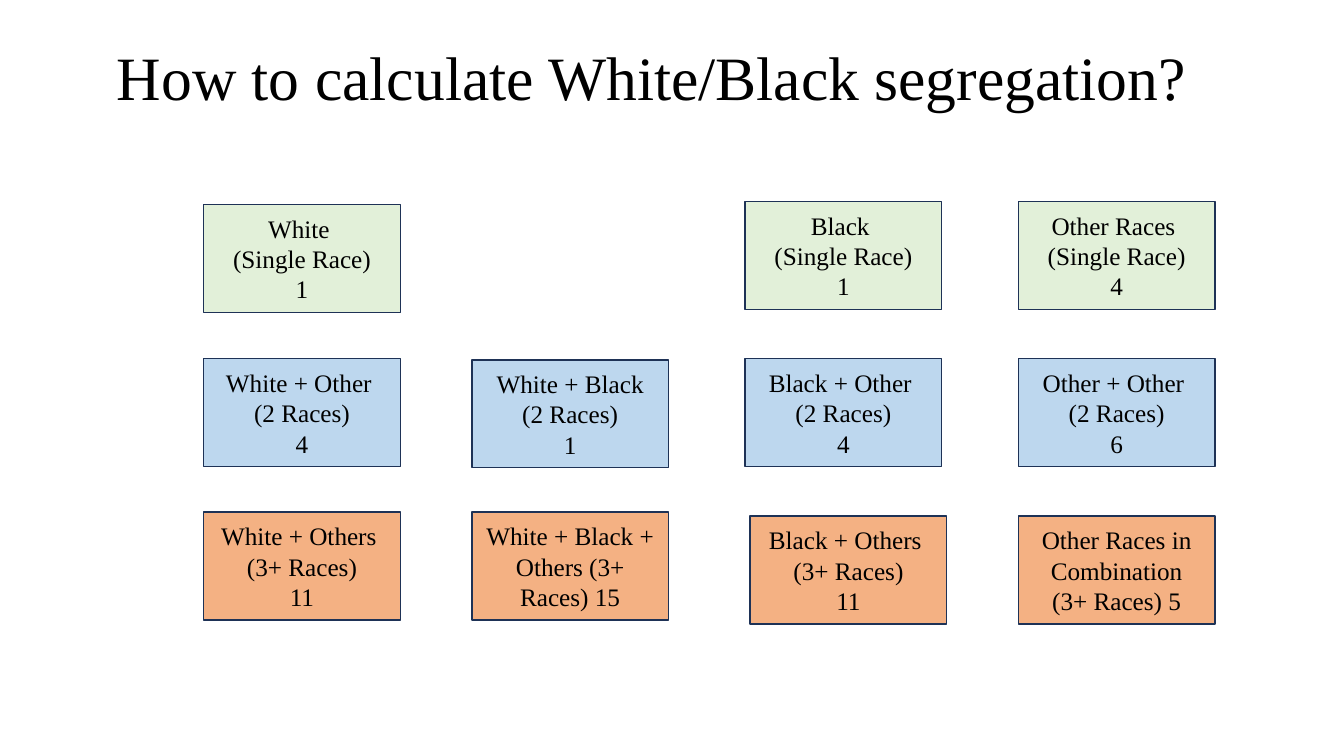
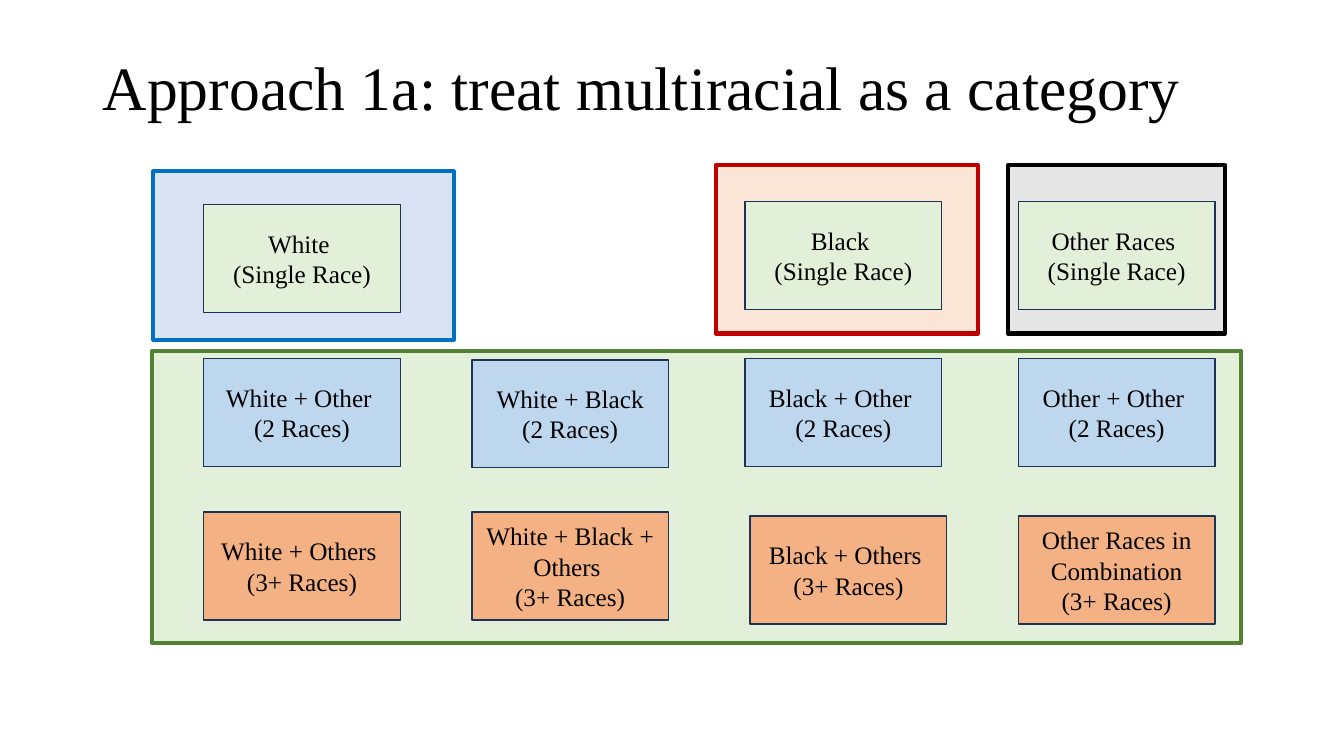
from dataclasses import dataclass

from pptx import Presentation
from pptx.dml.color import RGBColor
from pptx.enum.shapes import MSO_SHAPE
from pptx.enum.text import MSO_ANCHOR, PP_ALIGN
from pptx.shapes.autoshape import Shape
from pptx.slide import Slide
from pptx.util import Inches, Pt


@dataclass(frozen=True)
class Theme:
    font: str = "Times New Roman"
    title_size: int = 44
    box_size: int = 18
    text: str = "000000"
    outline: str = "1E3256"
    outline_width: int = 1
    frame_width: int = 3


@dataclass(frozen=True)
class Level:
    label: str
    fill: str


@dataclass(frozen=True)
class Group:
    name: str
    level: Level
    left: float
    top: float
    count: int
    counted_lines: tuple[str, ...] = ()  # only where the count shares a line

    def lines(self, with_count: bool) -> tuple[str, ...]:
        plain = (self.name, self.level.label)
        if not with_count:
            return plain
        return self.counted_lines or (*plain, str(self.count))


@dataclass(frozen=True)
class Frame:
    left: float
    top: float
    width: float
    height: float
    fill: str
    line: str


@dataclass(frozen=True)
class Page:
    title: str
    title_left: float
    title_top: float
    title_height: float
    with_count: bool
    frames: tuple[Frame, ...] = ()


THEME = Theme()
BOX_WIDTH, BOX_HEIGHT = 1.95, 1.07
TITLE_WIDTH = 11.5

SINGLE = Level("(Single Race)", "E2F0D9")
TWO = Level("(2 Races)", "BDD7EE")
THREE = Level("(3+ Races)", "F4B183")

WHITE_X, MIXED_X, BLACK_X, OTHER_X = 2.02, 4.68, 7.39, 10.1

GROUPS = (
    Group("White ", SINGLE, WHITE_X, 2.03, 1),
    Group("Black ", SINGLE, BLACK_X, 2, 1),
    Group("Other Races ", SINGLE, OTHER_X, 2, 4),
    Group("White + Other ", TWO, WHITE_X, 3.56, 4),
    Group("White + Black", TWO, MIXED_X, 3.57, 1),
    Group("Black + Other ", TWO, BLACK_X, 3.56, 4),
    Group("Other + Other ", TWO, OTHER_X, 3.56, 6),
    Group("White + Others ", THREE, WHITE_X, 5.08, 11),
    Group("White + Black + Others ", THREE, MIXED_X, 5.08, 15,
          ("White + Black + Others (3+ Races) 15",)),
    Group("Black + Others ", THREE, 7.44, 5.12, 11),
    Group("Other Races in Combination", THREE, OTHER_X, 5.12, 5,
          ("Other Races in Combination", "(3+ Races) 5")),
)

CATEGORY_FRAMES = (
    Frame(10, 1.64, 2.15, 1.67, "E7E6E6", "000000"),
    Frame(1.51, 3.48, 10.8, 2.9, "E2F0D9", "548235"),
    Frame(1.52, 1.7, 2.98, 1.67, "DAE3F3", "0070C0"),
    Frame(7.1, 1.64, 2.6, 1.67, "FBE5D6", "C00000"),
)

PAGES = (
    Page("How to calculate White/Black segregation?", 1.06, 0.25, 1.09, True),
    Page("Approach 1a: treat multiracial as a category", 0.92, 0.4, 1, False,
         CATEGORY_FRAMES),
)


def write_text(sp: Shape, lines: tuple[str, ...], size: int, align: PP_ALIGN,
               spacing: float = 1.0) -> None:
    tf = sp.text_frame
    tf.word_wrap = True
    tf.vertical_anchor = MSO_ANCHOR.MIDDLE
    tf.text = "\n".join(lines)
    for p in tf.paragraphs:
        p.alignment = align
        p.line_spacing = spacing
        p.font.name = THEME.font
        p.font.size = Pt(size)
        p.font.color.rgb = RGBColor.from_string(THEME.text)


def add_rectangle(s: Slide, left: float, top: float, width: float, height: float,
                  fill: str, line: str, line_width: int) -> Shape:
    sp = s.shapes.add_shape(MSO_SHAPE.RECTANGLE, Inches(left), Inches(top),
                            Inches(width), Inches(height))
    sp.shadow.inherit = False
    sp.fill.solid()
    sp.fill.fore_color.rgb = RGBColor.from_string(fill)
    sp.line.color.rgb = RGBColor.from_string(line)
    sp.line.width = Pt(line_width)
    return sp


def add_group(s: Slide, group: Group, with_count: bool) -> None:
    sp = add_rectangle(s, group.left, group.top, BOX_WIDTH, BOX_HEIGHT,
                       group.level.fill, THEME.outline, THEME.outline_width)
    write_text(sp, group.lines(with_count), THEME.box_size, PP_ALIGN.CENTER)


def add_title(s: Slide, page: Page) -> None:
    sp = s.shapes.add_textbox(Inches(page.title_left), Inches(page.title_top),
                              Inches(TITLE_WIDTH), Inches(page.title_height))
    write_text(sp, (page.title,), THEME.title_size, PP_ALIGN.LEFT, 0.9)


def add_page(prs: Presentation, page: Page) -> None:
    s = prs.slides.add_slide(prs.slide_layouts[6])
    for frame in page.frames:
        add_rectangle(s, frame.left, frame.top, frame.width, frame.height,
                      frame.fill, frame.line, THEME.frame_width)
    for group in GROUPS:
        add_group(s, group, page.with_count)
    add_title(s, page)


def main() -> None:
    prs = Presentation()
    prs.slide_width, prs.slide_height = Inches(13.33), Inches(7.5)
    for page in PAGES:
        add_page(prs, page)
    prs.save("out.pptx")


if __name__ == "__main__":
    main()
